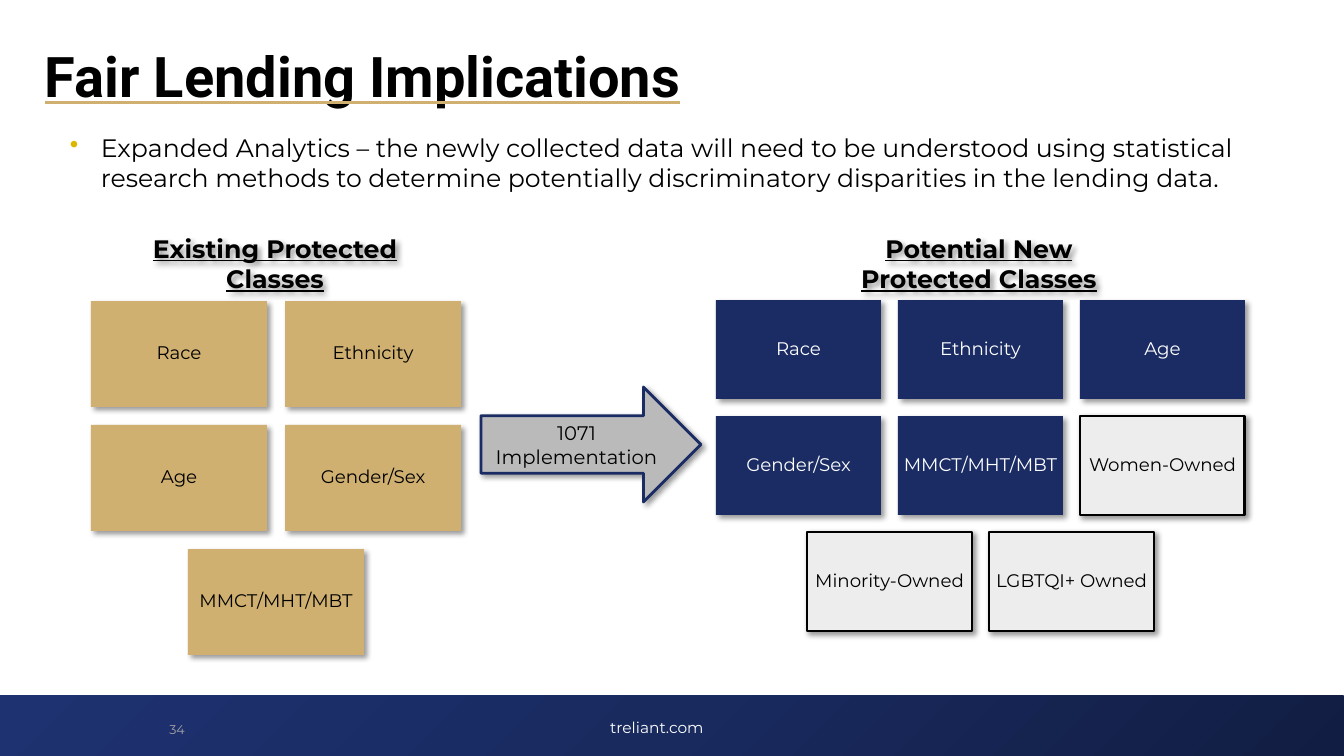
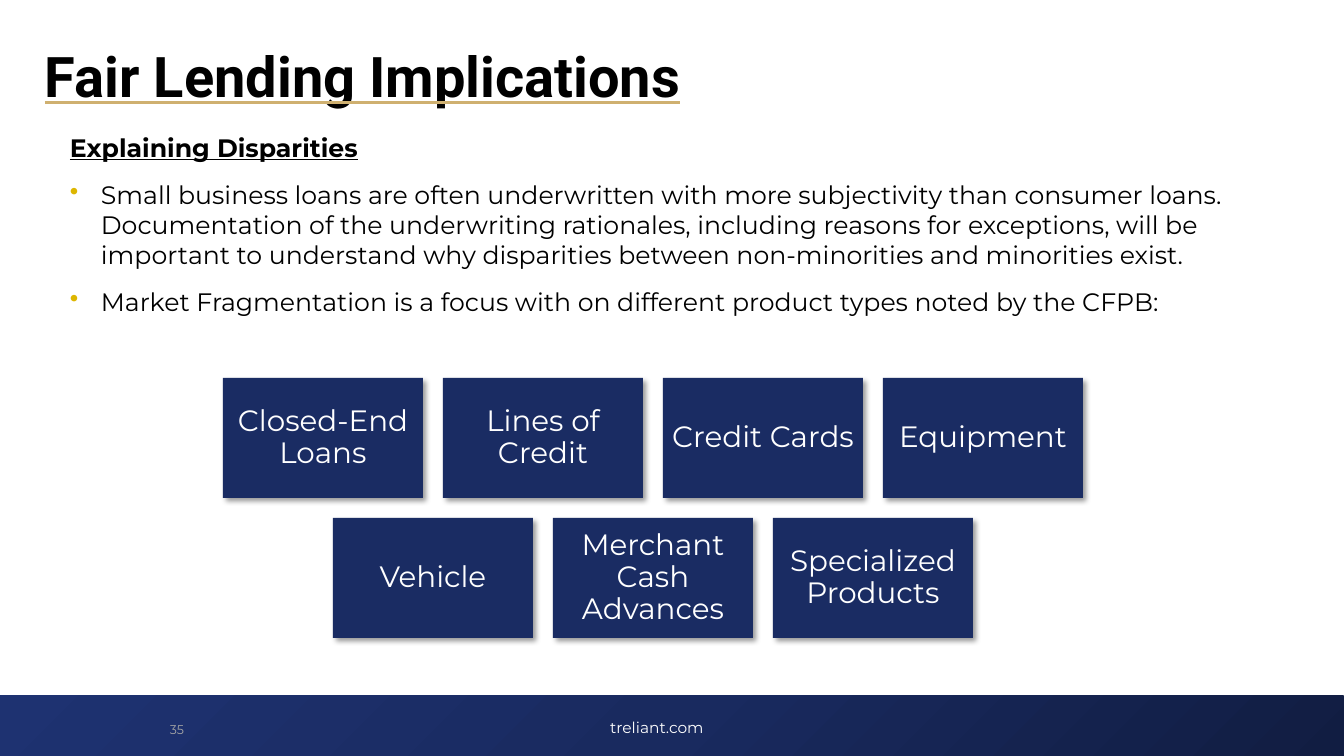
"""Build two slides on fair lending implications."""
from copy import deepcopy
from dataclasses import dataclass, replace

from lxml import etree
from pptx import Presentation, util as u
from pptx.dml.color import RGBColor
from pptx.enum import shapes, text
from pptx.oxml import ns
from pptx.shapes.autoshape import Shape
from pptx.slide import Slide

EMU_PER_PX = 914400 / 100.8
BLACK, WHITE, GRAY = "000000", "FFFFFF", "A6A6A6"
NAVY, GOLD, BULLET = "1A2C63", "CFB070", "DDB600"
PALE, SILVER = "EDEDED", "BABABA"
BAND_STOPS = ((0, "111D42"), (0.5, "192A5F"), (1, "1E3271"))
CENTER = text.PP_ALIGN.CENTER
RECT = shapes.MSO_SHAPE.RECTANGLE


@dataclass(frozen=True)
class Area:
    left: int
    top: int
    width: int
    height: int


@dataclass(frozen=True)
class Style:
    size: int
    color: str = BLACK
    name: str = "Montserrat"
    strong: bool = False
    align: text.PP_ALIGN | None = CENTER
    spacing: float = 1
    after: int = 0


@dataclass(frozen=True)
class Look:
    fill: str
    ink: str
    line: str | None = None


@dataclass(frozen=True)
class Grid:
    center: int
    top: int
    width: int
    height: int
    gap: int
    size: int
    inset: int
    rows: tuple[tuple[tuple[str, Look], ...], ...]


GOLD_CARD = Look(GOLD, BLACK)
NAVY_CARD = Look(NAVY, WHITE)
PALE_CARD = Look(PALE, BLACK, BLACK)
BODY = Style(18, align=None, after=12)
HEADING = Style(18, strong=True, after=12)


def px(value: int) -> u.Emu:
    """Turn pixels into EMU."""
    return u.Emu(round(value * EMU_PER_PX))


def rgb(color: str) -> RGBColor:
    """Turn a hex string into a colour."""
    return RGBColor.from_string(color)


def child(parent: etree._Element, tag: str, **values: str) -> etree._Element:
    """Append a drawing element to a parent."""
    return etree.SubElement(parent, ns.qn(f"a:{tag}"), values)


def place(area: Area) -> tuple[u.Emu, ...]:
    """Give the position and size of an area in EMU."""
    return px(area.left), px(area.top), px(area.width), px(area.height)


def add_shadow(shape: Shape) -> None:
    """Give a shape a soft shadow to the lower right."""
    shape.shadow.inherit = False
    effects = shape._element.spPr.find(ns.qn("a:effectLst"))
    shadow = child(effects, "outerShdw", blurRad=str(u.Pt(4)), dist=str(u.Pt(3)),
                   dir="2700000", algn="tl", rotWithShape="0")
    child(child(shadow, "srgbClr", val=BLACK), "alpha", val="40000")


def add_bullet(para: text.PP_ALIGN) -> None:
    """Give a paragraph a hanging bullet."""
    props = para._p.get_or_add_pPr()
    props.set("marL", str(px(31)))
    props.set("indent", str(-px(31)))
    child(child(props, "buClr"), "srgbClr", val=BULLET)
    child(props, "buChar", char="•")


def write(shape: Shape, lines: tuple[str, ...], style: Style, inset: int = 5,
          middle: bool = True, bulleted: bool = False) -> None:
    """Write styled paragraphs into a shape."""
    frame = shape.text_frame
    frame.text = "\n".join(lines)
    frame.word_wrap = True
    frame.margin_left = frame.margin_right = px(inset)
    frame.margin_top = frame.margin_bottom = px(5)
    frame.vertical_anchor = text.MSO_ANCHOR.MIDDLE if middle else text.MSO_ANCHOR.TOP
    for para in frame.paragraphs:
        para.alignment = style.align
        para.line_spacing = style.spacing
        para.space_after = u.Pt(style.after)
        if bulleted:
            add_bullet(para)
        for span in para.runs:
            font = span.font
            font.size, font.name = u.Pt(style.size), style.name
            font.bold = font.underline = style.strong
            font.color.rgb = rgb(style.color)


def add_text(page: Slide, area: Area, lines: tuple[str, ...], style: Style,
             inset: int = 5, middle: bool = True, bulleted: bool = False) -> Shape:
    """Add a text box."""
    box = page.shapes.add_textbox(*place(area))
    write(box, lines, style, inset, middle, bulleted)
    return box


def add_card(page: Slide, area: Area, label: str, look: Look, style: Style,
             inset: int = 5, kind: shapes.MSO_SHAPE = RECT) -> None:
    """Add a filled shape with a shadow and a centred label."""
    card = page.shapes.add_shape(kind, *place(area))
    card.fill.solid()
    card.fill.fore_color.rgb = rgb(look.fill)
    if look.line:
        card.line.color.rgb = rgb(look.line)
        card.line.width = u.Pt(2)
    else:
        card.line.fill.background()
    add_shadow(card)
    write(card, (label,), replace(style, color=look.ink), inset)


def add_grid(page: Slide, grid: Grid) -> None:
    """Add rows of cards, each row centred on the grid."""
    style = Style(grid.size, spacing=0.9)
    for row_index, row in enumerate(grid.rows):
        row_width = len(row) * (grid.width + grid.gap) - grid.gap
        left = grid.center - row_width // 2
        top = grid.top + row_index * (grid.height + grid.gap)
        for index, (label, look) in enumerate(row):
            area = Area(left + index * (grid.width + grid.gap), top, grid.width, grid.height)
            add_card(page, area, label, look, style, grid.inset)


def add_band(page: Slide) -> None:
    """Add the gradient band at the foot of a page."""
    band = page.shapes.add_shape(RECT, *place(Area(0, 696, 1344, 60)))
    band.shadow.inherit = False
    band.line.fill.background()
    band.fill.gradient()
    band.fill.gradient_angle = 135
    stops = band._element.spPr.find(".//" + ns.qn("a:gsLst"))
    stops.append(deepcopy(stops[0]))
    for stop, (position, color) in zip(band.fill.gradient_stops, BAND_STOPS):
        stop.position = position
        stop.color.rgb = rgb(color)


def add_page(deck: Presentation, title: str, number: int) -> Slide:
    """Add a page with its band, footer, number and title."""
    page = deck.slides.add_slide(deck.slide_layouts[6])
    add_band(page)
    add_text(page, Area(486, 710, 342, 37), ("treliant.com",), Style(11, WHITE, spacing=0.9))
    add_text(page, Area(112, 709, 130, 40), (str(number),), Style(9, GRAY))
    heading = add_text(page, Area(40, 20, 1230, 118), (title,),
                       Style(40, name="Roboto", strong=True, align=None, spacing=0.9))
    props = heading.text_frame.paragraphs[0].runs[0].font._element
    underline = etree.Element(ns.qn("a:uFill"))
    child(child(underline, "solidFill"), "srgbClr", val=GOLD)
    props.find(ns.qn("a:latin")).addprevious(underline)
    return page


def add_classes_page(deck: Presentation) -> None:
    """Add the page that compares protected classes."""
    page = add_page(deck, "Fair Lending Implications", 34)
    add_text(page, Area(60, 127, 1223, 72), (
        "Expanded Analytics – the newly collected data will need to be understood using "
        "statistical research methods to determine potentially discriminatory disparities "
        "in the lending data.",), BODY, 10, False, True)
    shared = ("Race", "Ethnicity", "Age", "Gender/Sex", "MMCT/MHT/MBT")
    gold = [(label, GOLD_CARD) for label in shared]
    new = [(label, NAVY_CARD) for label in shared]
    new += [(label, PALE_CARD) for label in ("Women-Owned", "Minority-Owned", "LGBTQI+ Owned")]
    add_grid(page, Grid(276, 301, 176, 106, 18, 13, 5,
                        (tuple(gold[:2]), tuple(gold[2:4]), tuple(gold[4:]))))
    add_grid(page, Grid(980, 300, 165, 99, 17, 13, 5,
                        (tuple(new[:3]), tuple(new[3:6]), tuple(new[6:]))))
    add_card(page, Area(481, 387, 220, 115), "1071 Implementation",
             Look(SILVER, BLACK, NAVY), Style(14), kind=shapes.MSO_SHAPE.RIGHT_ARROW)
    for left, label in ((125, "Existing Protected Classes"),
                        (829, "Potential New Protected Classes")):
        add_shadow(add_text(page, Area(left, 228, 300, 72), (label,), HEADING, 10, False))


def add_disparities_page(deck: Presentation) -> None:
    """Add the page that explains disparities."""
    page = add_page(deck, "Fair Lending Implications", 35)
    add_text(page, Area(60, 127, 1223, 42), ("Explaining Disparities",),
             replace(HEADING, align=None), 10, False)
    add_text(page, Area(60, 174, 1223, 150), (
        "Small business loans are often underwritten with more subjectivity than consumer "
        "loans. Documentation of the underwriting rationales, including reasons for "
        "exceptions, will be important to understand why disparities between non-minorities "
        "and minorities exist.",
        "Market Fragmentation is a focus with on different product types noted by the CFPB:",
    ), BODY, 10, False, True)
    rows = (("Closed-End Loans", "Lines of Credit", "Credit Cards", "Equipment"),
            ("Vehicle", "Merchant Cash Advances", "Specialized Products"))
    add_grid(page, Grid(653, 378, 200, 120, 20, 21, 8,
                        tuple(tuple((label, NAVY_CARD) for label in row) for row in rows)))


def main() -> None:
    """Build and save the deck."""
    deck = Presentation()
    deck.slide_width, deck.slide_height = px(1344), px(756)
    add_classes_page(deck)
    add_disparities_page(deck)
    deck.save("out.pptx")


if __name__ == "__main__":
    main()
